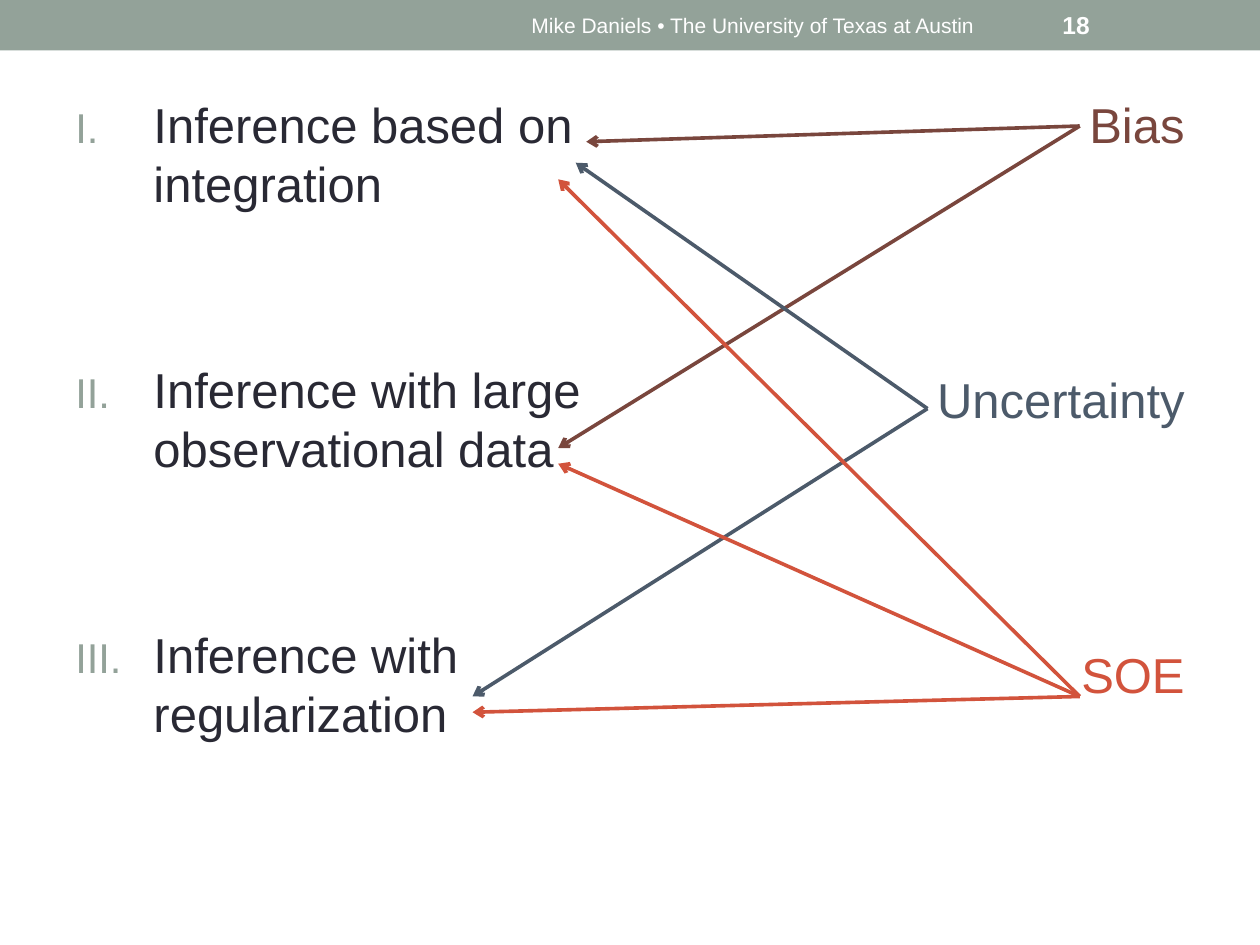
from pptx import Presentation
from pptx import util as u
from pptx.dml.color import RGBColor
from pptx.enum import shapes, text
from pptx.oxml.ns import qn
from lxml import etree

Pt = u.Pt
FONT = "Arial"
SAGE, INK, WHITE = "93A299", "292934", "FFFFFF"
BROWN, SLATE, RED = "79463D", "4C5A6A", "D2533C"
SIZE, LINE = 28, 33.65

# Content
TOPICS = [
    ("Inference based on integration", INK),
    ("Inference with large observational data", INK),
    ("Inference with regularization", INK),
]
ISSUES = [("Bias", BROWN), ("Uncertainty", SLATE), ("SOE", RED)]
FOOTER = "Mike Daniels • The University of Texas at Austin "
NUMBER = "18"

# Each fan of arrows: colour, shared start, ends
FANS = [
    (BROWN, (617, 72), [(335, 81), (319, 256)]),
    (SLATE, (530, 233.5), [(329, 93), (270, 398)]),
    (RED, (617, 398), [(270, 407), (319, 102.5), (319, 265)]),
]


def rgb(code):
    return RGBColor.from_string(code)


def style(para, size, color, bold=False):
    font = para.font
    font.name, font.size, font.bold = FONT, Pt(size), bold
    font.color.rgb = rgb(color)


def add_box(slide, left, top, width, height, anchor):
    box = slide.shapes.add_textbox(Pt(left), Pt(top), Pt(width), Pt(height))
    frame = box.text_frame
    frame.word_wrap = True
    frame.vertical_anchor = anchor
    return frame


def add_list(slide, left, items, align, gap):
    frame = add_box(slide, left, 50.4, 318, 453, text.MSO_ANCHOR.TOP)
    for i, (words, color) in enumerate(items):
        para = frame.paragraphs[0] if i == 0 else frame.add_paragraph()
        para.text = words
        para.alignment = align
        para.line_spacing = Pt(LINE)
        para.space_before = Pt(gap if i else 0)
        style(para, SIZE, color)
    return frame


def add_roman(para):
    props = para._p.get_or_add_pPr()
    props.set("marL", str(Pt(44.64)))
    props.set("indent", str(-Pt(44.64)))
    tint = etree.Element(qn("a:buClr"))
    etree.SubElement(tint, qn("a:srgbClr"), val=SAGE)
    size = etree.Element(qn("a:buSzPct"), val="85000")
    face = etree.Element(qn("a:buFont"), typeface=FONT)
    kind = etree.Element(qn("a:buAutoNum"), type="romanUcPeriod")
    rest = props.find(qn("a:defRPr"))
    for part in (tint, size, face, kind):
        if rest is None:
            props.append(part)
        else:
            rest.addprevious(part)


def add_label(slide, left, width, words, size, align, bold=False):
    frame = add_box(slide, left, 1.44, width, 25.92, text.MSO_ANCHOR.MIDDLE)
    para = frame.paragraphs[0]
    para.text = words
    para.alignment = align
    style(para, size, WHITE, bold)


def add_arrow(slide, start, end, color):
    ends = [Pt(v) for v in (*start, *end)]
    arrow = slide.shapes.add_connector(shapes.MSO_CONNECTOR.STRAIGHT, *ends)
    arrow.line.color.rgb = rgb(color)
    arrow.line.width = Pt(2.08)
    etree.SubElement(arrow.line._get_or_add_ln(), qn("a:tailEnd"), type="arrow")
    etree.SubElement(arrow._element.spPr, qn("a:effectLst"))


def main():
    deck = Presentation()
    deck.slide_width, deck.slide_height = Pt(720), Pt(540)
    slide = deck.slides.add_slide(deck.slide_layouts[6])
    align = text.PP_ALIGN

    # Top band
    band = slide.shapes.add_shape(
        shapes.MSO_SHAPE.RECTANGLE, 0, 0, Pt(720), Pt(28.8))
    band.shadow.inherit = False
    band.fill.solid()
    band.fill.fore_color.rgb = rgb(SAGE)
    band.line.fill.background()

    # Two lists, spread down the slide
    topics = add_list(slide, 36, TOPICS, align.LEFT, 84.1)
    for para in topics.paragraphs:
        add_roman(para)
    add_list(slide, 366, ISSUES, align.RIGHT, 123.4)

    # Footer text and slide number in the band
    add_label(slide, 270, 324, FOOTER, 12, align.CENTER)
    add_label(slide, 600, 84, NUMBER, 14, align.LEFT, True)

    # Arrows from issues to topics
    for color, start, ends in FANS:
        for end in ends:
            add_arrow(slide, start, end, color)

    deck.save("out.pptx")


if __name__ == "__main__":
    main()
